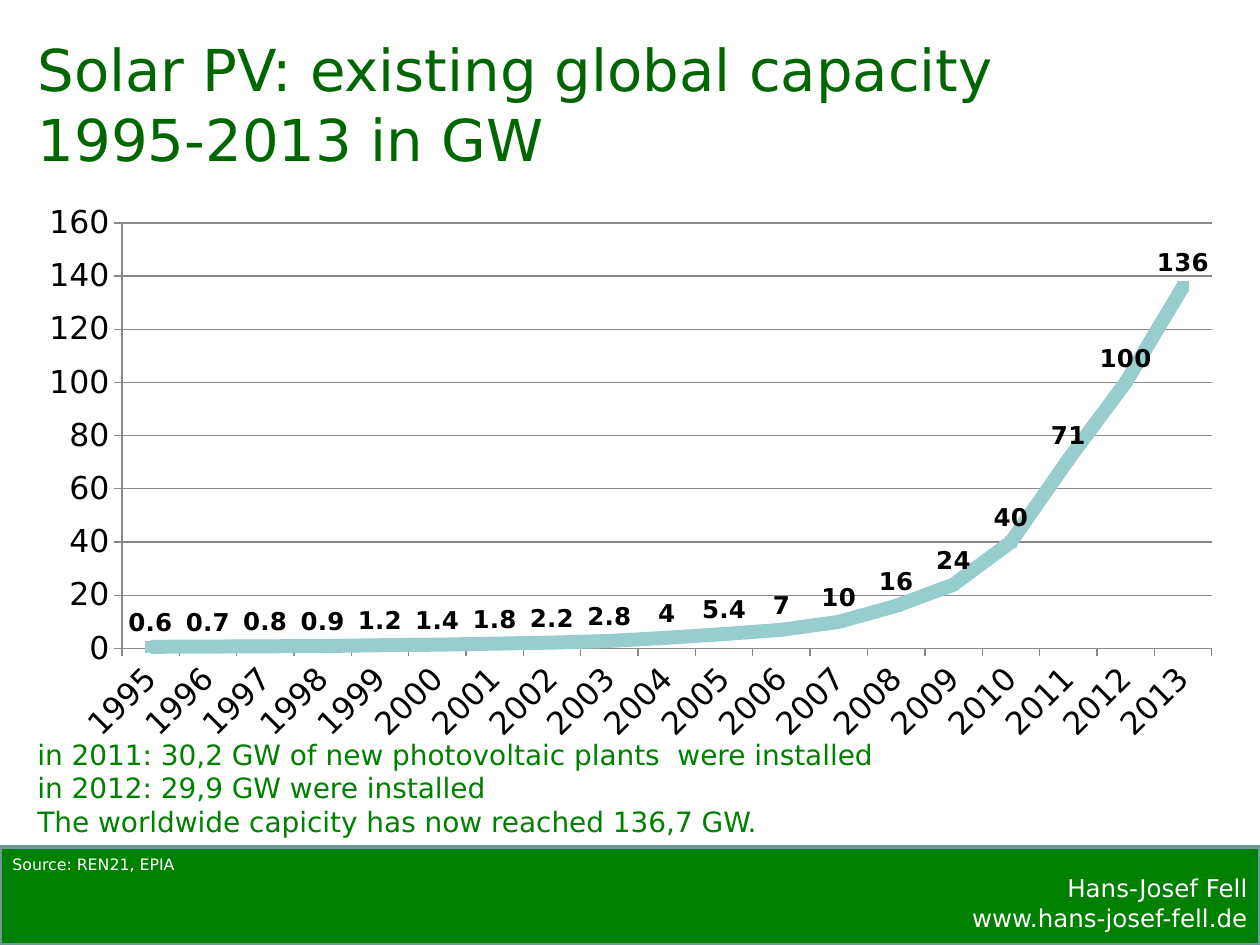
"""Build a slide charting global solar PV capacity from 1995 to 2013."""
from lxml.etree import SubElement
from pptx import Presentation
from pptx.chart.data import CategoryChartData
from pptx.dml.color import RGBColor
from pptx.enum.chart import XL_CHART_TYPE as ChartType
from pptx.enum.chart import XL_LABEL_POSITION as LabelPosition
from pptx.enum.chart import XL_MARKER_STYLE as MarkerStyle
from pptx.enum.chart import XL_TICK_MARK as TickMark
from pptx.enum.shapes import MSO_SHAPE as Shape
from pptx.enum.text import MSO_ANCHOR as Anchor
from pptx.enum.text import PP_ALIGN as Align
from pptx.oxml.ns import qn
from pptx.util import Emu, Pt

FONT = "DejaVu Sans"
COLORS = {
    "title": "006600", "green": "008000", "border": "709897", "white": "FFFFFF",
    "black": "000000", "line": "97CDCC", "axis": "888888",
}
TITLE = "Solar PV: existing global capacity 1995-2013 in GW"
SOURCE = ["Source: REN21, EPIA"]
AUTHOR = ["Hans-Josef Fell", "www.hans-josef-fell.de"]
NOTES = [
    "in 2011: 30,2 GW of new photovoltaic plants  were installed",
    "in 2012: 29,9 GW were installed",
    "The worldwide capicity has now reached 136,7 GW.",
]
YEARS = [str(year) for year in range(1995, 2014)]
CAPACITY = [0.6, 0.7, 0.8, 0.9, 1.2, 1.4, 1.8, 2.2, 2.8, 4,
            5.4, 7, 10, 16, 24, 40, 71, 100, 136]

PAGE = (1260, 945)
TITLE_BOX = (25, 26, 1061, 153)
FOOTER_BOX = (0, 847, 1260, 98)
CHART_BOX = (25, 195, 1211, 560)
PLOT_BOX = (121, 224, 1090, 424)
TEXT_BOXES = [
    (AUTHOR, (748, 867, 512, 78), 14, "white", Align.RIGHT),
    (SOURCE, (0, 849, 525, 32), 9, "white", Align.LEFT),
    (NOTES, (25, 731, 1211, 118), 16, "green", Align.LEFT),
]


def px(*lengths):
    return [Emu(round(length * 914400 / 126)) for length in lengths]


def color(name):
    return RGBColor.from_string(COLORS[name])


def style_font(font, size, name, bold=False):
    font.name, font.size, font.bold = FONT, Pt(size), bold
    font.color.rgb = color(name)


def fill_text(frame, lines, size, name, align):
    frame.word_wrap = True
    frame.text = "\n".join(lines)
    for para in frame.paragraphs:
        para.alignment = align
        for span in para.runs:
            style_font(span.font, size, name)


def add_title(page):
    title = page.shapes.title
    title.left, title.top, title.width, title.height = px(*TITLE_BOX)
    fill_text(title.text_frame, [TITLE], 33, "title", Align.LEFT)
    title.text_frame.vertical_anchor = Anchor.BOTTOM


def add_footer(page):
    bar = page.shapes.add_shape(Shape.RECTANGLE, *px(*FOOTER_BOX))
    bar.shadow.inherit = False
    bar.fill.solid()
    bar.fill.fore_color.rgb = color("green")
    bar.line.color.rgb = color("border")
    bar.line.width = Pt(2)


def place_plot(chart):
    area = chart._chartSpace.chart.plotArea
    for old in area.findall(qn("c:layout")):
        area.remove(old)
    layout = SubElement(area, qn("c:layout"))
    area.insert(0, layout)
    manual = SubElement(layout, qn("c:manualLayout"))
    left, top, width, height = CHART_BOX
    plot_left, plot_top, plot_width, plot_height = PLOT_BOX
    settings = {
        "layoutTarget": "inner", "xMode": "edge", "yMode": "edge",
        "x": round((plot_left - left) / width, 2),
        "y": round((plot_top - top) / height, 2),
        "w": round(plot_width / width, 2),
        "h": round(plot_height / height, 2),
    }
    for tag, value in settings.items():
        SubElement(manual, qn(f"c:{tag}")).set("val", str(value))


def style_axes(chart):
    values, years = chart.value_axis, chart.category_axis
    values.minimum_scale, values.maximum_scale, values.major_unit = 0, 160, 20
    values.has_major_gridlines = True
    for axis in (values, years):
        axis.major_tick_mark = TickMark.OUTSIDE
        style_font(axis.tick_labels.font, 18, "black")
    for line in (values.format.line, years.format.line, values.major_gridlines.format.line):
        line.color.rgb = color("axis")
        line.width = Pt(0.75)
    years._element.txPr.find(qn("a:bodyPr")).set("rot", str(-45 * 60000))


def style_series(series):
    series.smooth = False
    series.format.line.color.rgb = color("line")
    series.format.line.width = Pt(8)
    marker = series.marker
    marker.style, marker.size = MarkerStyle.SQUARE, 6
    marker.format.fill.solid()
    marker.format.fill.fore_color.rgb = color("line")
    marker.format.line.color.rgb = color("line")
    labels = series.data_labels
    labels.show_value = True
    labels.position = LabelPosition.ABOVE
    style_font(labels.font, 14, "black", bold=True)


def add_capacity_chart(page):
    data = CategoryChartData()
    data.categories = YEARS
    data.add_series("Series 1", CAPACITY)
    chart = page.shapes.add_chart(ChartType.LINE_MARKERS, *px(*CHART_BOX), data).chart
    chart.has_legend = False
    chart.has_title = False
    chart.plots[0].vary_by_categories = False
    style_font(chart.font, 18, "black")
    place_plot(chart)
    style_axes(chart)
    style_series(chart.plots[0].series[0])


def main():
    deck = Presentation()
    deck.slide_width, deck.slide_height = px(*PAGE)
    page = deck.slides.add_slide(deck.slide_layouts[5])
    add_title(page)
    add_footer(page)
    for lines, place, size, name, align in TEXT_BOXES:
        box = page.shapes.add_textbox(*px(*place))
        fill_text(box.text_frame, lines, size, name, align)
    add_capacity_chart(page)
    deck.save("out.pptx")


if __name__ == "__main__":
    main()
